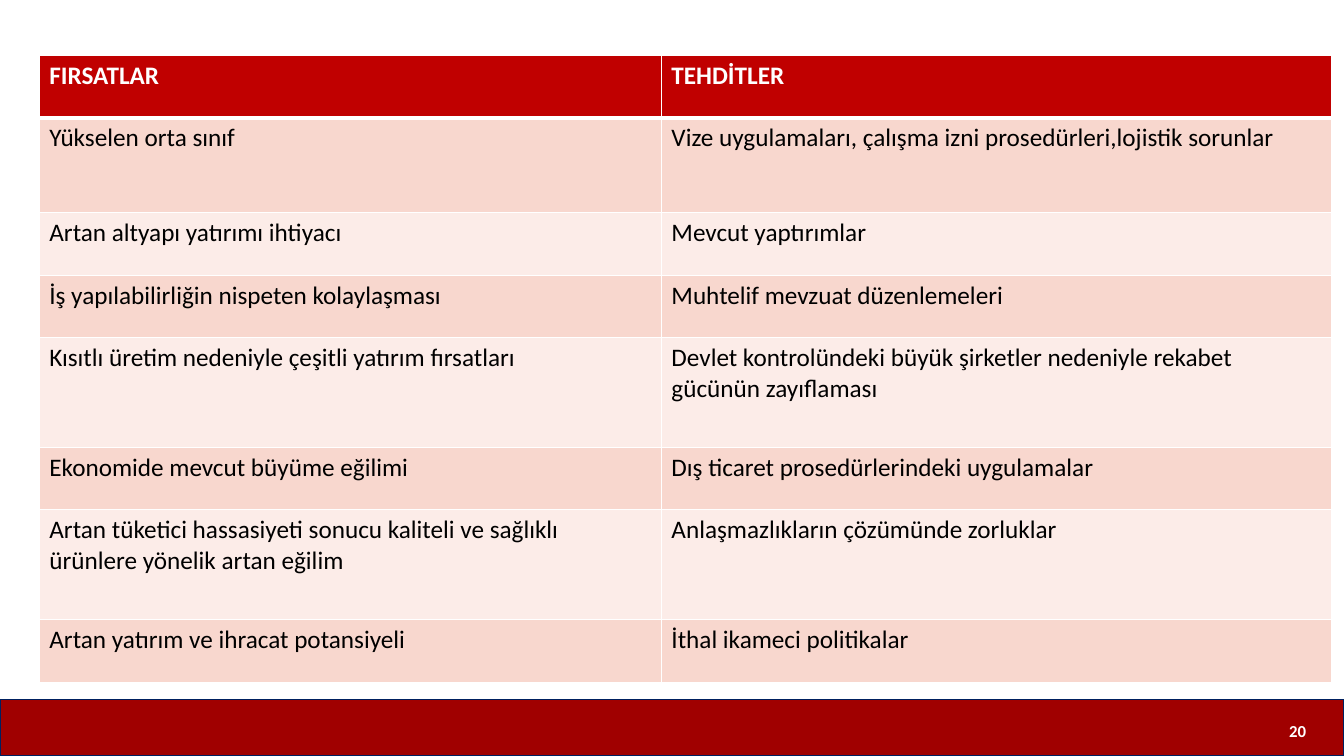
from lxml import etree
from pptx import Presentation
from pptx import util as u
from pptx.dml.color import RGBColor
from pptx.enum import shapes, text
from pptx.oxml.ns import qn

PX = 9144  # EMU in one px, 100 px to the inch
COLORS = {
    "header": "C00000", "band": "F8D7CE", "light": "FCECE8", "footer": "A00000",
    "edge": "002060", "white": "FFFFFF", "black": "000000",
}
HEADINGS = ("FIRSATLAR", "TEHDİTLER")
ROWS = [
    ("Yükselen orta sınıf",
     "Vize uygulamaları, çalışma izni prosedürleri,lojistik sorunlar"),
    ("Artan altyapı yatırımı ihtiyacı", "Mevcut yaptırımlar"),
    ("İş yapılabilirliğin nispeten kolaylaşması", "Muhtelif mevzuat düzenlemeleri"),
    ("Kısıtlı üretim nedeniyle çeşitli yatırım fırsatları",
     "Devlet kontrolündeki büyük şirketler nedeniyle rekabet gücünün zayıflaması"),
    ("Ekonomide mevcut büyüme eğilimi", "Dış ticaret prosedürlerindeki uygulamalar"),
    ("Artan tüketici hassasiyeti sonucu kaliteli ve sağlıklı ürünlere yönelik artan eğilim",
     "Anlaşmazlıkların çözümünde zorluklar"),
    ("Artan yatırım ve ihracat potansiyeli", "İthal ikameci politikalar"),
]
COLUMN_WIDTHS = (617, 665)
ROW_HEIGHTS = (62, 94, 62, 62, 109, 62, 109, 62)


def px(*lengths):
    return [u.Emu(length * PX) for length in lengths]


def color(name):
    return RGBColor.from_string(COLORS[name])


def write(para, words, size, ink, bold=False):
    span = para.add_run()
    span.text = words
    span.font.name = "Calibri"
    span.font.size = u.Pt(size)
    span.font.bold = bold
    span.font.color.rgb = color(ink)


def add_borders(cell, bottom):
    properties = cell._tc.get_or_add_tcPr()
    widths = {"a:lnL": 1, "a:lnR": 1, "a:lnT": 1, "a:lnB": bottom}
    # Borders come before the fill in the cell properties
    for place, (tag, points) in enumerate(widths.items()):
        line = etree.Element(qn(tag), w=str(u.Pt(points)))
        fill = etree.SubElement(line, qn("a:solidFill"))
        etree.SubElement(fill, qn("a:srgbClr"), val=COLORS["white"])
        properties.insert(place, line)


def add_swot_table(page, left, top):
    frame = page.shapes.add_table(
        len(ROW_HEIGHTS), len(COLUMN_WIDTHS),
        *px(left, top, sum(COLUMN_WIDTHS), sum(ROW_HEIGHTS)))
    table = frame.table
    for column, width in zip(table.columns, COLUMN_WIDTHS):
        column.width = u.Emu(width * PX)
    for row, height in zip(table.rows, ROW_HEIGHTS):
        row.height = u.Emu(height * PX)

    for r, row_words in enumerate([HEADINGS, *ROWS]):
        is_header = r == 0
        fill = "header" if is_header else ("light", "band")[r % 2]
        for c, words in enumerate(row_words):
            cell = table.cell(r, c)
            cell.fill.solid()
            cell.fill.fore_color.rgb = color(fill)
            add_borders(cell, bottom=3 if is_header else 1)
            write(cell.text_frame.paragraphs[0], words, 18,
                  "white" if is_header else "black", is_header)


def add_footer(page, left, top, width, height):
    # Red bar
    bar = page.shapes.add_shape(
        shapes.MSO_SHAPE.RECTANGLE, *px(left, top, width, height))
    bar.shadow.inherit = False
    bar.fill.solid()
    bar.fill.fore_color.rgb = color("footer")
    bar.line.color.rgb = color("edge")
    bar.line.width = u.Pt(1)

    # Page number
    number = page.shapes.add_shape(
        shapes.MSO_SHAPE.ROUND_2_SAME_RECTANGLE, *px(left + width - 70, top, 48, 59))
    number.shadow.inherit = False
    number.fill.background()
    number.line.fill.background()
    frame = number.text_frame
    frame.vertical_anchor = text.MSO_ANCHOR.MIDDLE
    para = frame.paragraphs[0]
    para.alignment = text.PP_ALIGN.CENTER
    write(para, "20", 12, "white", bold=True)


def main():
    deck = Presentation()
    deck.slide_width, deck.slide_height = px(1333, 750)
    page = deck.slides.add_slide(deck.slide_layouts[6])
    add_footer(page, 0, 694, 1333, 56)
    add_swot_table(page, 39, 55)
    deck.save("out.pptx")


if __name__ == "__main__":
    main()
